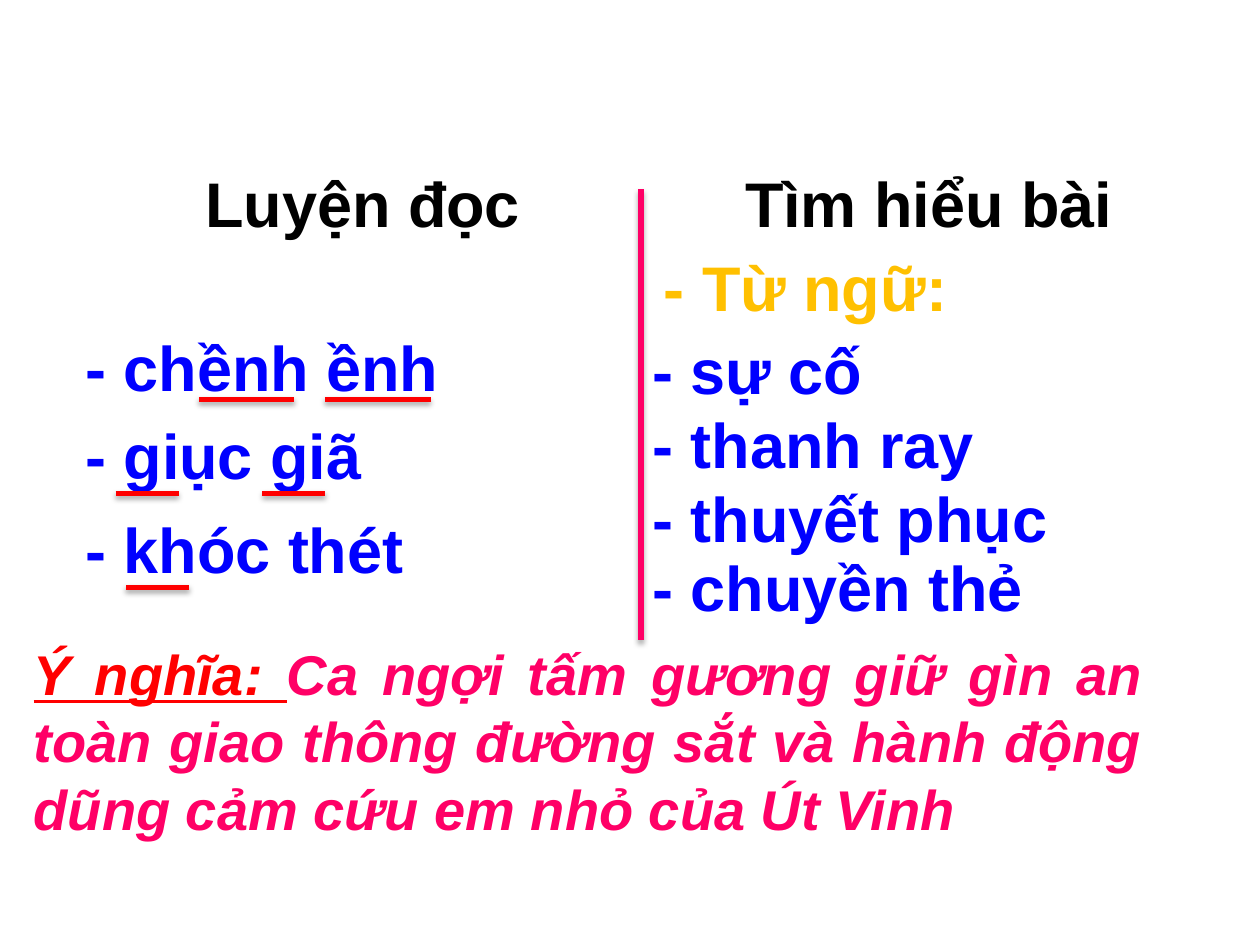
import pptx
import pptx.util
import pptx.dml.color
import pptx.enum.shapes
import pptx.enum.text
import lxml.etree
from pptx.util import Cm, Pt
from pptx.oxml.ns import qn

BLUE, RED, PINK, GOLD, BLACK = "0000FF", "FF0000", "FF0066", "FFC000", "000000"
FONT = "Arial"
BOX_WIDTH, BOX_HEIGHT = 11.23, 1.78
ANCHOR = pptx.enum.text.MSO_ANCHOR
ALIGN = pptx.enum.text.PP_ALIGN

# Positions in cm: placeholder index, text, left, top
HEADINGS = [(1, "Luyện đọc", 1.7, 3.18), (3, "Tìm hiểu bài", 13.11, 3.18)]
# Text, left, top, colour
ITEMS = [
    ("- chềnh ềnh", 1.47, 6.5, BLUE),
    ("- giục giã", 1.47, 8.26, BLUE),
    ("- khóc thét", 1.47, 10.16, BLUE),
    ("- Từ ngữ:", 13.13, 4.88, GOLD),
    ("- sự cố", 12.9, 6.55, BLUE),
    ("- thanh ray", 12.9, 8.05, BLUE),
    ("- thuyết phục", 12.9, 9.53, BLUE),
    ("- chuyền thẻ", 12.9, 10.92, BLUE),
]
# Left, right, height on the slide
UNDERLINES = [
    (4.01, 5.93, 8.05),
    (6.55, 8.68, 8.05),
    (2.33, 3.6, 9.95),
    (5.29, 6.56, 9.95),
    (2.54, 3.81, 11.85),
]
MEANING = [
    ("Ý nghĩa: ", RED, True),
    ("Ca ngợi tấm gương giữ gìn an toàn giao thông đường sắt "
     "và hành động dũng cảm cứu em nhỏ của Út Vinh", PINK, False),
]


def colour(value):
    return pptx.dml.color.RGBColor.from_string(value)


def place(shape, left, top, width=BOX_WIDTH, height=BOX_HEIGHT):
    shape.left, shape.top = Cm(left), Cm(top)
    shape.width, shape.height = Cm(width), Cm(height)


def write_line(shape, text, fill, align=ALIGN.LEFT):
    """Fill a shape with one bold line standing on its lower edge."""
    frame = shape.text_frame
    frame.word_wrap = True
    frame.auto_size = pptx.enum.text.MSO_AUTO_SIZE.NONE
    frame.vertical_anchor = ANCHOR.BOTTOM
    para = frame.paragraphs[0]
    para.text = text
    para.alignment = align
    para.space_before = Pt(7)
    font = para.font
    font.name, font.size, font.bold = FONT, Pt(36), True
    font.color.rgb = colour(fill)


def add_line(slide, start, end, stroke):
    line = slide.shapes.add_connector(
        pptx.enum.shapes.MSO_CONNECTOR.STRAIGHT,
        *(Cm(value) for value in (*start, *end)))
    line.line.color.rgb = colour(stroke)
    line.line.width = Pt(3)
    effects = lxml.etree.SubElement(line._element.spPr, qn("a:effectLst"))
    shadow = lxml.etree.SubElement(
        effects, qn("a:outerShdw"), blurRad=str(Pt(3.1)), dist=str(Pt(1.8)),
        dir="5400000", rotWithShape="0")
    shade = lxml.etree.SubElement(shadow, qn("a:srgbClr"), val=BLACK)
    lxml.etree.SubElement(shade, qn("a:alpha"), val="35000")


def add_meaning(slide):
    box = slide.shapes.add_textbox(0, 0, 0, 0)
    place(box, 0.43, 13.34, 22.86, 3.18)
    frame = box.text_frame
    frame.word_wrap = True
    frame.vertical_anchor = ANCHOR.MIDDLE
    para = frame.paragraphs[0]
    para.alignment = ALIGN.JUSTIFY
    font = para.font
    font.name, font.size, font.bold, font.italic = FONT, Pt(32), True, True
    for text, fill, underlined in MEANING:
        span = para.add_run()
        span.text = text
        span.font.color.rgb = colour(fill)
        span.font.underline = underlined


def main():
    deck = pptx.Presentation()
    deck.slide_width, deck.slide_height = Cm(25.4), Cm(19.05)
    slide = deck.slides.add_slide(deck.slide_layouts.get_by_name("Comparison"))

    headings = {index: rest for index, *rest in HEADINGS}
    for holder in list(slide.placeholders):
        index = holder.placeholder_format.idx
        if index in headings:
            text, left, top = headings[index]
            place(holder, left, top)
            write_line(holder, text, BLACK, ALIGN.CENTER)
        else:
            holder._element.getparent().remove(holder._element)

    for text, left, top, fill in ITEMS:
        box = slide.shapes.add_textbox(0, 0, 0, 0)
        place(box, left, top)
        write_line(box, text, fill)

    for left, right, height in UNDERLINES:
        add_line(slide, (left, height), (right, height), RED)
    add_line(slide, (12.92, 3.81), (12.92, 12.9), PINK)

    add_meaning(slide)
    deck.save("out.pptx")


if __name__ == "__main__":
    main()
